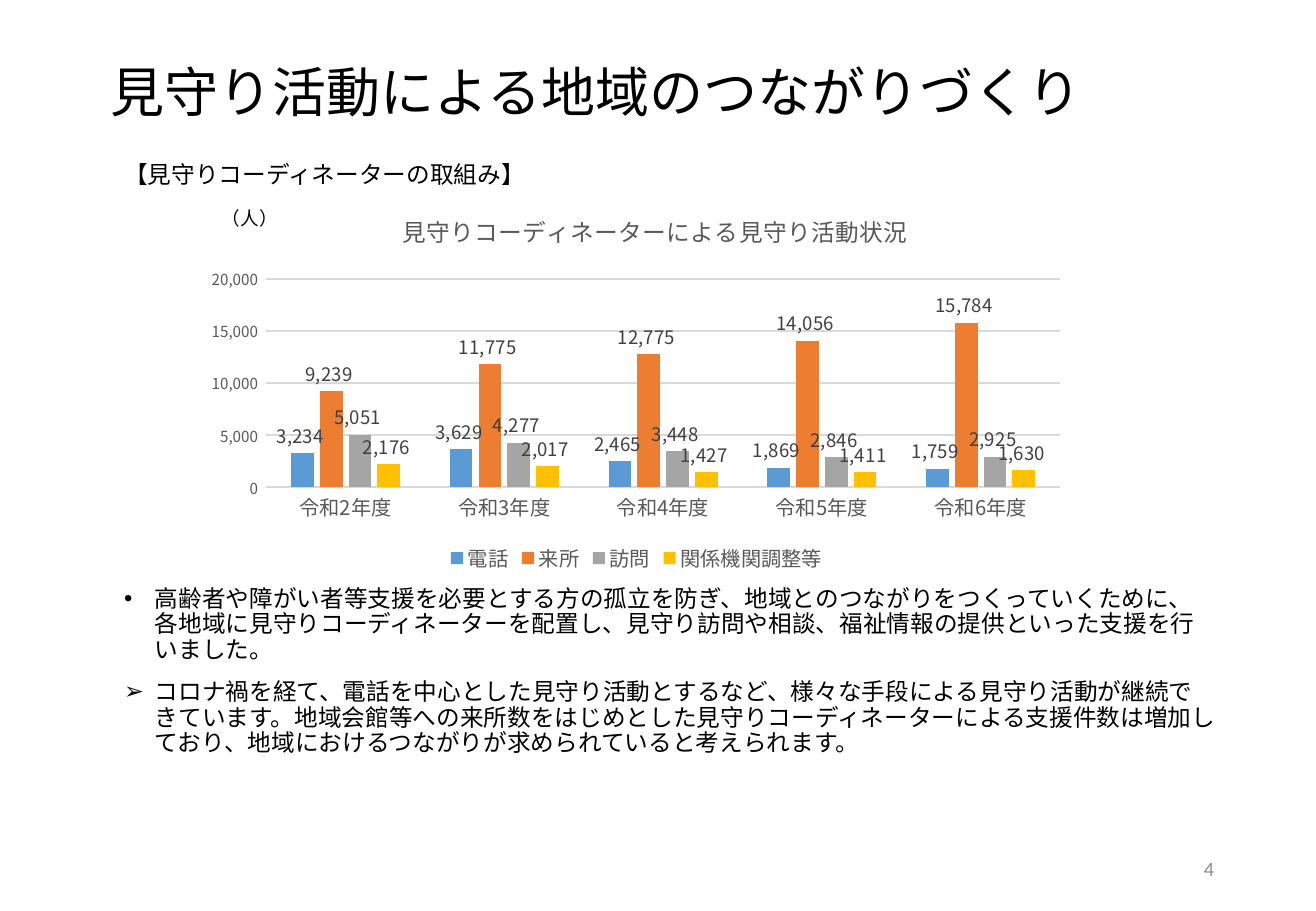
import pptx
import pptx.chart.data
import pptx.dml.color
import pptx.enum.chart
import pptx.enum.text
import pptx.oxml
import pptx.oxml.ns
import pptx.util
from pptx.util import Cm, Pt

JAPANESE = "Noto Sans CJK JP"
GREY_TEXT = "595959"
GREY_LINE = "D9D9D9"
NUMBER_FORMAT = r"#,##0_);[Red]\(#,##0\)"
LINE_SPACING = 0.9
qn = pptx.oxml.ns.qn

TITLE = "見守り活動による地域のつながりづくり"
HEADING = "【見守りコーディネーターの取組み】"
BULLETS = [
    ("•", "高齢者や障がい者等支援を必要とする方の孤立を防ぎ、地域とのつながりをつくっていくために、"
          "各地域に見守りコーディネーターを配置し、見守り訪問や相談、福祉情報の提供といった支援を行いました。"),
    ("➢", "コロナ禍を経て、電話を中心とした見守り活動とするなど、様々な手段による見守り活動が継続できています。"
          "地域会館等への来所数をはじめとした見守りコーディネーターによる支援件数は増加しており、"
          "地域におけるつながりが求められていると考えられます。"),
]
CHART_TITLE = "見守りコーディネーターによる見守り活動状況"
YEARS = [f"令和{year}年度" for year in range(2, 7)]
SERIES = [
    ("電話", "5B9BD5", (3234, 3629, 2465, 1869, 1759)),
    ("来所", "ED7D31", (9239, 11775, 12775, 14056, 15784)),
    ("訪問", "A5A5A5", (5051, 4277, 3448, 2846, 2925)),
    ("関係機関調整等", "FFC000", (2176, 2017, 1427, 1411, 1630)),
]


def set_color(color_format, value):
    color_format.rgb = pptx.dml.color.RGBColor.from_string(value)


def set_values(target, values):
    for name, value in values.items():
        setattr(target, name, value)


def set_font(font, size, color="000000", name=JAPANESE):
    set_values(font, {"size": Pt(size), "name": name, "bold": False})
    set_color(font.color, color)


def set_east_asian_font(root):
    """Give Japanese characters the same typeface as Latin ones."""
    for latin in list(root.iter(qn("a:latin"))):
        east_asian = pptx.oxml.parse_xml(
            f'<a:ea {pptx.oxml.ns.nsdecls("a")} typeface="{latin.get("typeface")}"/>')
        latin.addnext(east_asian)


def place(shape, box):
    set_values(shape, dict(zip(("left", "top", "width", "height"), map(Cm, box))))


def set_bullet(para, mark, indent):
    properties = para._p.get_or_add_pPr()
    properties.set("marL", str(indent))
    properties.set("indent", str(-indent))
    bullet = f'<a:buChar {{}} char="{mark}"/>' if mark else "<a:buNone {}/>"
    properties.append(pptx.oxml.parse_xml(bullet.format(pptx.oxml.ns.nsdecls("a"))))


def add_title(slide, box):
    title = slide.shapes.title
    place(title, box)
    frame = title.text_frame
    set_values(frame, {"text": TITLE, "word_wrap": True,
                       "auto_size": pptx.enum.text.MSO_AUTO_SIZE.NONE,
                       "vertical_anchor": pptx.enum.text.MSO_ANCHOR.MIDDLE})
    para = frame.paragraphs[0]
    set_values(para, {"alignment": pptx.enum.text.PP_ALIGN.LEFT, "line_spacing": LINE_SPACING})
    set_font(para.runs[0].font, 32)


def add_body(slide, box):
    body = slide.placeholders[1]
    place(body, box)
    frame = body.text_frame
    set_values(frame, {"word_wrap": True, "auto_size": pptx.enum.text.MSO_AUTO_SIZE.NONE})
    # The space before the first bullet leaves room for the chart
    rows = [("", HEADING, 0, 0)]
    rows += [(mark, text, Cm(0.64), gap) for (mark, text), gap in zip(BULLETS, (236, 10))]
    for index, (mark, text, indent, gap) in enumerate(rows):
        para = frame.add_paragraph() if index else frame.paragraphs[0]
        set_bullet(para, mark, indent)
        set_values(para, {"line_spacing": LINE_SPACING, "space_before": Pt(gap),
                          "space_after": Pt(0)})
        span = para.add_run()
        span.text = text
        set_font(span.font, 14)


def add_label(slide, box, text, anchor, alignment, **font):
    label = slide.shapes.add_textbox(*map(Cm, box))
    frame = label.text_frame
    set_values(frame, {"text": text, "word_wrap": True, "vertical_anchor": anchor})
    frame.paragraphs[0].alignment = alignment
    set_font(frame.paragraphs[0].runs[0].font, **font)


def set_layout(element, index, **fractions):
    """Fix the place of a chart part, in fractions of the chart."""
    for old in element.findall(qn("c:layout")):
        element.remove(old)
    target = '<c:layoutTarget val="inner"/>' if "w" in fractions else ""
    modes = "".join(f'<c:{key}Mode val="edge"/>' for key in "xy")
    values = "".join(f'<c:{key} val="{value}"/>' for key, value in fractions.items())
    element.insert(index, pptx.oxml.parse_xml(
        f'<c:layout {pptx.oxml.ns.nsdecls("c")}><c:manualLayout>'
        f"{target}{modes}{values}</c:manualLayout></c:layout>"))


def add_activity_chart(slide, box):
    data = pptx.chart.data.CategoryChartData(number_format=NUMBER_FORMAT)
    data.categories = YEARS
    for name, _, values in SERIES:
        data.add_series(name, values)
    kinds = pptx.enum.chart
    chart = slide.shapes.add_chart(
        kinds.XL_CHART_TYPE.COLUMN_CLUSTERED, *map(Cm, box), data).chart
    set_font(chart.font, 10)

    # Title and legend
    title = chart.chart_title.text_frame
    title.text = CHART_TITLE
    set_font(title.paragraphs[0].runs[0].font, 14, GREY_TEXT)
    chart.has_legend = True
    set_values(chart.legend, {"position": kinds.XL_LEGEND_POSITION.BOTTOM,
                              "include_in_layout": False})
    set_font(chart.legend.font, 12, GREY_TEXT)

    # Axes
    for axis, size in ((chart.category_axis, 12), (chart.value_axis, 9)):
        set_values(axis, {"major_tick_mark": kinds.XL_TICK_MARK.NONE,
                          "minor_tick_mark": kinds.XL_TICK_MARK.NONE})
        set_font(axis.tick_labels.font, size, GREY_TEXT)
    value_axis = chart.value_axis
    set_values(value_axis, {"minimum_scale": 0, "maximum_scale": 20000,
                            "major_unit": 5000, "has_major_gridlines": True})
    set_values(value_axis.tick_labels,
               {"number_format": NUMBER_FORMAT, "number_format_is_linked": False})
    value_axis.format.line.fill.background()
    for line in (chart.category_axis.format.line, value_axis.major_gridlines.format.line):
        set_color(line.color, GREY_LINE)
        line.width = Pt(0.75)

    # Columns
    plot = chart.plots[0]
    set_values(plot, {"gap_width": 219, "overlap": -27, "vary_by_categories": False})
    for series, (_, color, _) in zip(plot.series, SERIES):
        series.format.fill.solid()
        set_color(series.format.fill.fore_color, color)
        labels = series.data_labels
        set_values(labels, {"show_value": True, "number_format": NUMBER_FORMAT,
                            "number_format_is_linked": False,
                            "position": kinds.XL_LABEL_POSITION.OUTSIDE_END})
        set_font(labels.font, 11, "404040")

    root = chart._chartSpace
    set_layout(root.find(".//" + qn("c:plotArea")), 0, x=0.08, y=0.21, w=0.9, h=0.55)
    set_layout(root.find(qn("c:chart")).find(qn("c:title")), 1, x=0.23, y=0.02)
    set_east_asian_font(root)


def main():
    deck = pptx.Presentation()
    set_values(deck, {"slide_width": Cm(27.51), "slide_height": Cm(19.05)})
    page = deck.slides.add_slide(deck.slide_layouts[1])
    anchors, aligns = pptx.enum.text.MSO_ANCHOR, pptx.enum.text.PP_ALIGN

    add_title(page, (2.06, 1.27, 23.47, 1.45))
    add_body(page, (2.34, 3.28, 23.34, 14.38))
    add_label(page, (19.43, 17.65, 6.2, 1.02), "4", anchors.MIDDLE, aligns.RIGHT,
              size=12, color="8C8C8C", name="Calibri")
    add_activity_chart(page, (4.09, 4.17, 18.44, 7.92))
    add_label(page, (4.39, 3.73, 1.75, 1.19), "（人）", anchors.BOTTOM, aligns.LEFT, size=11)
    set_east_asian_font(page.shapes.element)
    deck.save("out.pptx")


if __name__ == "__main__":
    main()
